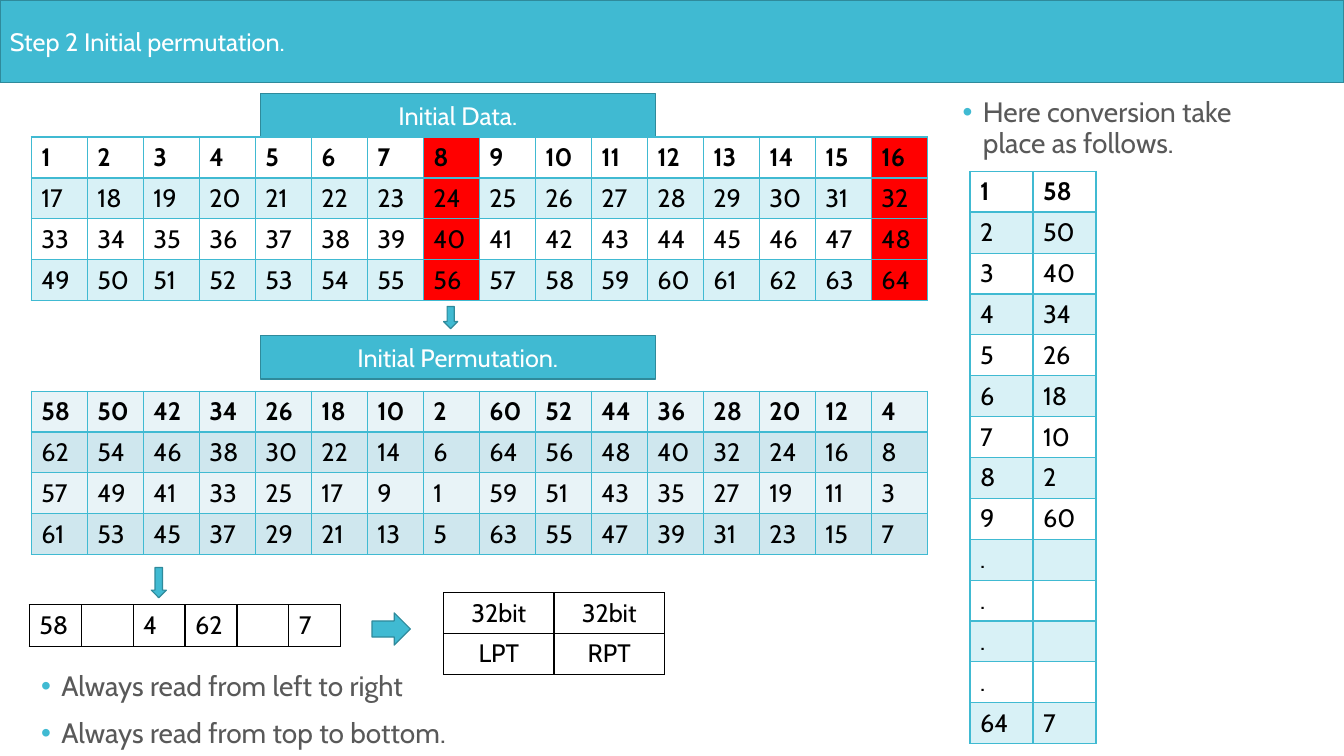
import pptx
import pptx.dml.color
import pptx.enum.shapes
import pptx.enum.text
import pptx.oxml
import pptx.oxml.ns
import pptx.util

Inches, Pt = pptx.util.Inches, pptx.util.Pt
RGB = pptx.dml.color.RGBColor.from_string
MSO = pptx.enum.shapes.MSO_SHAPE
ALIGN = pptx.enum.text.PP_ALIGN
NS = pptx.oxml.ns.nsdecls("a")

COLORS = {
    "teal": "40BAD2", "teal_edge": "2F8A9B", "white": "FFFFFF", "black": "000000",
    "red": "FF0000", "pale": "E8F3F7", "pale_dark": "CFE7EE", "body": "595959",
}

deck = pptx.Presentation()
deck.slide_width, deck.slide_height = Inches(13.33), Inches(7.5)
slide = deck.slides.add_slide(deck.slide_layouts[6])


def write(paragraph, text, color, size=18, bold=False, align=ALIGN.LEFT):
    paragraph.alignment = align
    if text:
        run = paragraph.add_run()
        run.text = text
        font_format = {"name": "Cabin", "size": Pt(size), "bold": bold}
        for attribute, value in font_format.items():
            setattr(run.font, attribute, value)
        run.font.color.rgb = RGB(COLORS[color])


def add_grid(box, rows, border="teal", bands=(None, None), header=False,
             header_rule=1, red_columns=(), align=ALIGN.LEFT):
    frame = slide.shapes.add_table(len(rows), len(rows[0]), *map(Inches, box))
    grid = frame.table
    grid.first_row = grid.horz_banding = False
    for r, values in enumerate(rows):
        for c, value in enumerate(values):
            cell = grid.cell(r, c)
            top_row = header and r == 0
            write(cell.text_frame.paragraphs[0], str(value), "black", bold=top_row, align=align)
            # Borders come before the fill in the cell properties
            properties = cell._tc.get_or_add_tcPr()
            for side in "LRTB":
                width = header_rule if top_row and side == "B" else 1
                properties.append(pptx.oxml.parse_xml(
                    f'<a:ln{side} {NS} w="{Pt(width)}"><a:solidFill>'
                    f'<a:srgbClr val="{COLORS[border]}"/></a:solidFill></a:ln{side}>'))
            fill = "red" if c in red_columns else bands[r % 2]
            if fill is None:
                cell.fill.background()
                continue
            cell.fill.solid()
            cell.fill.fore_color.rgb = RGB(COLORS[fill])
            if fill == "teal":  # light band: 20 % opaque
                tint = properties.find("a:solidFill/a:srgbClr", pptx.oxml.ns._nsmap)
                tint.append(pptx.oxml.parse_xml(f'<a:alpha {NS} val="20000"/>'))


# Title bar, table captions and arrows
for kind, box, caption, align in [
    (MSO.RECTANGLE, (0, 0, 13.33, 0.82), "Step 2 Initial permutation.", ALIGN.LEFT),
    (MSO.RECTANGLE, (2.58, 0.93, 3.92, 0.43), "Initial Data.", ALIGN.CENTER),
    (MSO.RECTANGLE, (2.58, 3.33, 3.92, 0.43), "Initial Permutation.", ALIGN.CENTER),
    (MSO.DOWN_ARROW, (4.4, 3.04, 0.14, 0.22), "", ALIGN.CENTER),
    (MSO.DOWN_ARROW, (1.5, 5.63, 0.15, 0.3), "", ALIGN.CENTER),
    (MSO.RIGHT_ARROW, (3.69, 6.08, 0.38, 0.32), "", ALIGN.CENTER),
]:
    block = slide.shapes.add_shape(kind, *map(Inches, box))
    block.shadow.inherit = False
    block.fill.solid()
    block.fill.fore_color.rgb = RGB(COLORS["teal"])
    block.line.color.rgb = RGB(COLORS["teal_edge"])
    block.line.width = Pt(0.85)
    block.text_frame.vertical_anchor = pptx.enum.text.MSO_ANCHOR.MIDDLE
    write(block.text_frame.paragraphs[0], caption, "white", align=align)

# Initial data: 1 to 64 in order
initial_data = [range(first, first + 16) for first in range(1, 65, 16)]
add_grid((0.31, 1.36, 8.89, 1.62), initial_data, bands=(None, "teal"),
         header=True, header_rule=2, red_columns=(7, 15))

# Initial permutation: down by 8, the right half two higher
permutation = [[first - 8 * (c % 8) + 2 * (c // 8) for c in range(16)]
               for first in (58, 62, 57, 61)]
add_grid((0.31, 3.88, 8.89, 1.62), permutation, bands=("pale", "pale_dark"), header=True)

# Position conversion
conversion = list(enumerate((58, 50, 40, 34, 26, 18, 10, 2, 60), start=1))
conversion += [(".", "")] * 4 + [(64, 7)]
add_grid((9.62, 1.7, 1.25, 5.68), conversion, bands=(None, "teal"), header=True, header_rule=2)

# Permuted block and its two halves
add_grid((0.29, 6, 3.09, 0.41), [(58, "", 4, 62, "", 7)], border="black")
add_grid((4.4, 5.88, 2.19, 0.81), [("32bit", "32bit"), ("LPT", "RPT")],
         border="black", align=ALIGN.CENTER)

# Bulleted notes
for box, lines in [
    ((0.31, 6.62, 8.89, 0.88),
     ["Always read from left to right", "Always read from top to bottom."]),
    ((9.45, 0.93, 3.19, 0.71), ["Here conversion take place as follows."]),
]:
    notes = slide.shapes.add_textbox(*map(Inches, box)).text_frame
    notes.word_wrap = True
    notes.auto_size = pptx.enum.text.MSO_AUTO_SIZE.SHAPE_TO_FIT_TEXT
    for i, line in enumerate(lines):
        paragraph = notes.add_paragraph() if i else notes.paragraphs[0]
        write(paragraph, line, "body", size=20)
        paragraph.line_spacing = 0.9
        paragraph.space_before = Pt(12)
        properties = paragraph._p.get_or_add_pPr()
        properties.set("marL", str(Inches(0.2)))
        properties.set("indent", str(Inches(-0.2)))
        for bullet in (
            f'<a:buClr {NS}><a:srgbClr val="{COLORS["teal"]}"/></a:buClr>',
            f'<a:buFont {NS} typeface="Arial"/>',
            f'<a:buChar {NS} char="•"/>',
        ):
            properties.append(pptx.oxml.parse_xml(bullet))

deck.save("out.pptx")
